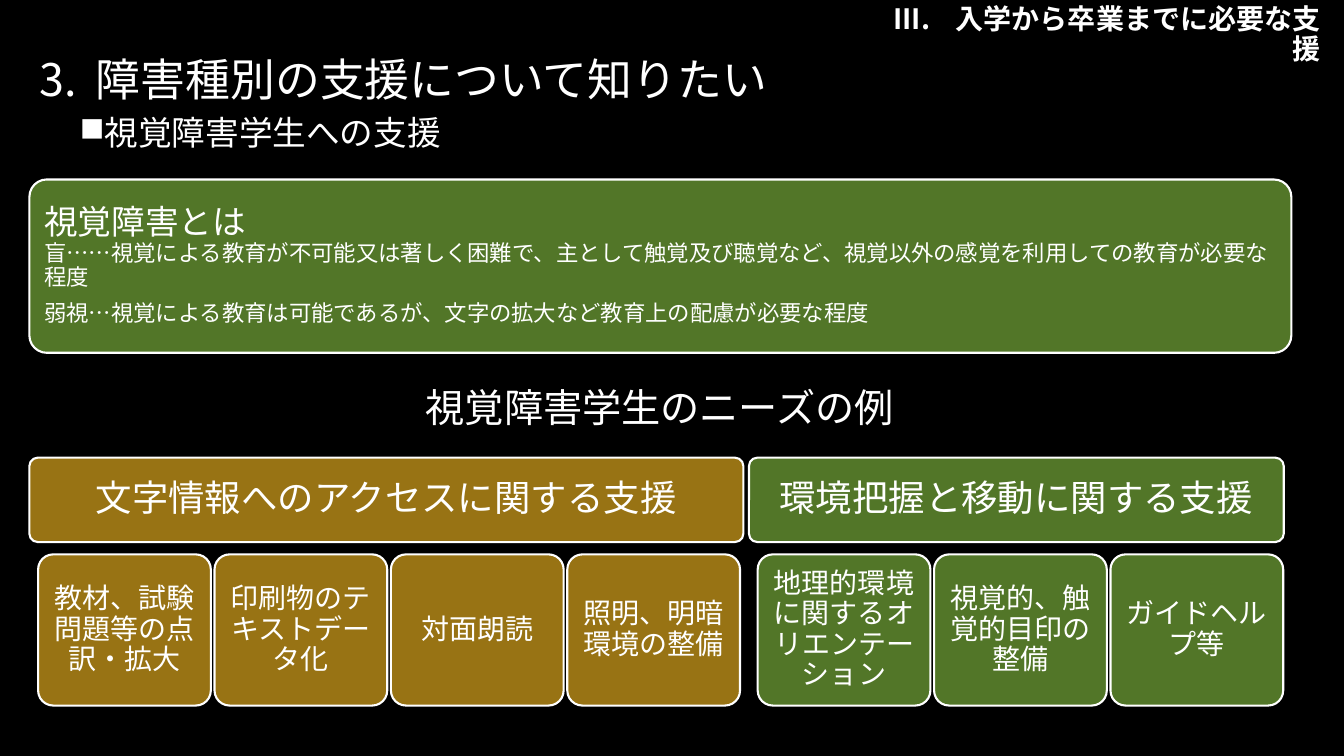
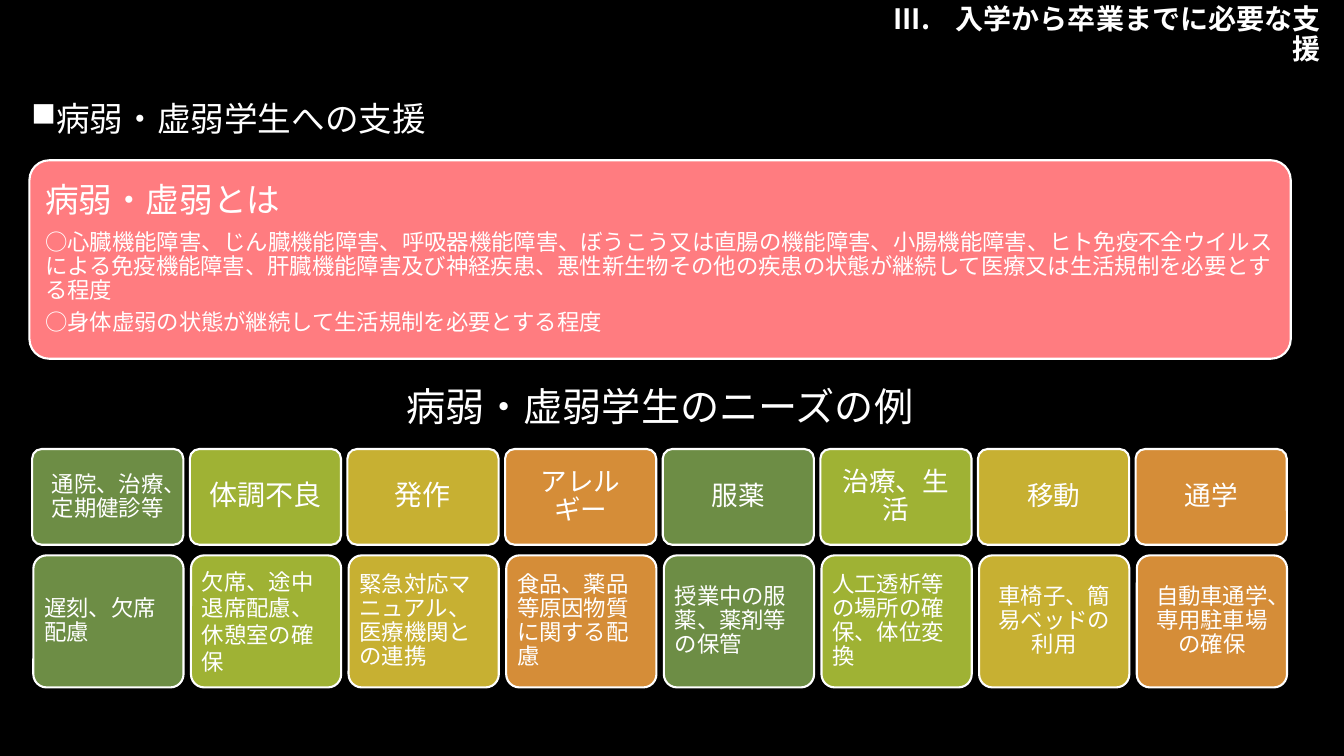
"""Build two slides on support for students with visual impairments and chronic illness."""
from dataclasses import dataclass
from itertools import cycle

from lxml import etree
from pptx import Presentation
from pptx.dml.color import RGBColor
from pptx.enum import lang, shapes, text
from pptx.oxml import ns
from pptx.util import Pt

FONT = "Noto Sans CJK JP"
BLACK = RGBColor(0x00, 0x00, 0x00)
WHITE = RGBColor(0xFF, 0xFF, 0xFF)
GREEN = RGBColor(0x52, 0x76, 0x28)
BROWN = RGBColor(0x98, 0x73, 0x14)
PINK = RGBColor(0xFF, 0x7C, 0x80)
SAGE = RGBColor(0x6D, 0x8D, 0x45)
LIME = RGBColor(0x9F, 0xB2, 0x34)
GOLD = RGBColor(0xC7, 0xB0, 0x32)
ORANGE = RGBColor(0xD5, 0x8D, 0x38)
LEFT, CENTER, RIGHT = text.PP_ALIGN.LEFT, text.PP_ALIGN.CENTER, text.PP_ALIGN.RIGHT


@dataclass(frozen=True)
class Area:
    left: float
    top: float
    width: float
    height: float

    def lengths(self) -> tuple:
        return Pt(self.left), Pt(self.top), Pt(self.width), Pt(self.height)


@dataclass(frozen=True)
class Bullet:
    tag: str
    attributes: dict
    margin: float
    hanging: float


@dataclass(frozen=True)
class Para:
    words: str
    size: float
    align: text.PP_ALIGN = LEFT
    before: float = 0
    after: float = 0
    spacing: float = 0.9
    bold: bool = False
    bullet: Bullet | None = None


@dataclass(frozen=True)
class Group:
    title: str
    color: RGBColor
    needs: tuple[str, ...]


@dataclass(frozen=True)
class Need:
    title: str
    size: float
    support: str
    align: text.PP_ALIGN = LEFT
    spacing: float = 0.9


ROMAN = Bullet("a:buAutoNum", {"type": "romanUcPeriod", "startAt": "3"}, 44.64, 44.64)
NUMBER = Bullet("a:buAutoNum", {"type": "arabicPeriod", "startAt": "3"}, 40.5, 40.5)
SQUARE = Bullet("a:buChar", {"char": "■"}, 46.8, 18)

VISION_GROUPS = (
    Group("文字情報へのアクセスに関する支援", BROWN,
          ("教材、試験問題等の点訳・拡大", "印刷物のテキストデータ化", "対面朗読", "照明、明暗環境の整備")),
    Group("環境把握と移動に関する支援", GREEN,
          ("地理的環境に関するオリエンテーション", "視覚的、触覚的目印の整備", "ガイドヘルプ等")),
)
ILLNESS_NEEDS = (
    Need("通院、治療、定期健診等", 16, "遅刻、欠席\n配慮"),
    Need("体調不良", 20, "欠席、途中退席配慮、休憩室の確保", spacing=1),
    Need("発作", 20, "緊急対応マニュアル、医療機関との連携"),
    Need("アレルギー", 19, "食品、薬品等原因物質に関する配慮"),
    Need("服薬", 19, "授業中の服薬、薬剤等の保管"),
    Need("治療、生活", 19, "人工透析等の場所の確保、体位変換"),
    Need("移動", 19, "車椅子、簡易ベッドの利用", CENTER),
    Need("通学", 19, "自動車通学、専用駐車場の確保", CENTER),
)


def fill_text(frame, paras: list[Para]) -> None:
    frame.word_wrap = True
    for index, para in enumerate(paras):
        paragraph = frame.paragraphs[0] if index == 0 else frame.add_paragraph()
        paragraph.text = para.words
        paragraph.alignment = para.align
        paragraph.line_spacing = para.spacing
        paragraph.space_before = Pt(para.before)
        paragraph.space_after = Pt(para.after)
        properties = paragraph._p.get_or_add_pPr()
        if para.bullet:
            properties.set("marL", str(int(Pt(para.bullet.margin))))
            properties.set("indent", str(-int(Pt(para.bullet.hanging))))
            etree.SubElement(properties, ns.qn(para.bullet.tag), para.bullet.attributes)
        font = paragraph.font
        font.name = FONT
        font.size = Pt(para.size)
        font.bold = para.bold
        font.color.rgb = WHITE
        font.language_id = lang.MSO_LANGUAGE_ID.JAPANESE
        defaults = properties.find(ns.qn("a:defRPr"))
        etree.SubElement(defaults, ns.qn("a:ea"), {"typeface": FONT})


def set_insets(frame, inset: float) -> None:
    frame.vertical_anchor = text.MSO_ANCHOR.MIDDLE
    frame.margin_left = frame.margin_right = Pt(inset)
    frame.margin_top = frame.margin_bottom = Pt(inset)


def add_text(page, area: Area, paras: list[Para]):
    box = page.shapes.add_textbox(*area.lengths())
    fill_text(box.text_frame, paras)
    return box


def add_card(page, area: Area, color: RGBColor, inset: float, paras: list[Para]) -> None:
    card = page.shapes.add_shape(shapes.MSO_SHAPE.ROUNDED_RECTANGLE, *area.lengths())
    card.adjustments[0] = 0.1
    card.shadow.inherit = False
    card.fill.solid()
    card.fill.fore_color.rgb = color
    card.line.color.rgb = WHITE
    card.line.width = Pt(1.5)
    set_insets(card.text_frame, inset)
    fill_text(card.text_frame, paras)


def add_needs_title(page, area: Area, words: str) -> None:
    box = add_text(page, area, [Para(words, 28, CENTER, after=9.8)])
    set_insets(box.text_frame, 8.4)


def add_page(deck):
    page = deck.slides.add_slide(deck.slide_layouts[6])
    page.background.fill.solid()
    page.background.fill.fore_color.rgb = BLACK
    add_text(page, Area(627, 0, 323.3, 37.4),
             [Para("入学から卒業までに必要な支援", 20, RIGHT, bold=True, bullet=ROMAN)])
    return page


def build_vision_page(deck) -> None:
    page = add_page(deck)
    add_text(page, Area(21, 37.4, 590, 85), [
        Para("障害種別の支援について知りたい", 32, bullet=NUMBER),
        Para("視覚障害学生への支援", 24, before=8, bullet=SQUARE),
    ])
    add_card(page, Area(21, 128.2, 901.4, 123.8), GREEN, 7.2, [
        Para("視覚障害とは", 24),
        Para("盲……視覚による教育が不可能又は著しく困難で、主として触覚及び聴覚など、"
             "視覚以外の感覚を利用しての教育が必要な程度", 16, after=8.4),
        Para("弱視…視覚による教育は可能であるが、文字の拡大など教育上の配慮が必要な程度", 16, after=5.6),
    ])
    add_needs_title(page, Area(23, 269.3, 896.4, 47.5), "視覚障害学生のニーズの例")
    left, pitch = 21, 126
    for group in VISION_GROUPS:
        width = 128 * len(group.needs) - 2
        add_card(page, Area(left, 326.9, width, 60.3), group.color, 7.9,
                 [Para(group.title, 26, CENTER, after=9.1)])
        for column, need in enumerate(group.needs):
            add_card(page, Area(left + 6.2 + column * pitch, 396, 123.4, 108), group.color, 5.8,
                     [Para(need, 20, CENTER, after=7)])
        left += width + 4


def build_illness_page(deck) -> None:
    page = add_page(deck)
    add_text(page, Area(-13.7, 69.8, 590, 57),
             [Para("病弱・虚弱学生への支援", 24, bullet=SQUARE)])
    add_card(page, Area(21, 114.5, 901, 141.8), PINK, 7.2, [
        Para("病弱・虚弱とは", 24, after=8.4),
        Para("○心臓機能障害、じん臓機能障害、呼吸器機能障害、ぼうこう又は直腸の機能障害、"
             "小腸機能障害、ヒト免疫不全ウイルスによる免疫機能障害、肝臓機能障害及び神経疾患、"
             "悪性新生物その他の疾患の状態が継続して医療又は生活規制を必要とする程度", 16, after=5.6),
        Para("○身体虚弱の状態が継続して生活規制を必要とする程度", 16, after=5.6),
    ])
    add_needs_title(page, Area(23, 271.4, 896.4, 41), "病弱・虚弱学生のニーズの例")
    colors = cycle((SAGE, LIME, GOLD, ORANGE))
    for column, (need, color) in enumerate(zip(ILLNESS_NEEDS, colors)):
        left = 23 + column * 112.6
        add_card(page, Area(left, 320.7, 108, 68.4), color, 5.4,
                 [Para(need.title, need.size, CENTER, after=need.size * 0.35)])
        after = 5.6 if need.spacing < 1 else 0
        add_card(page, Area(left + 0.8, 396.7, 107.3, 94.3), color, 5,
                 [Para(need.support, 16, need.align, after=after, spacing=need.spacing)])


def main() -> None:
    deck = Presentation()
    deck.slide_width, deck.slide_height = Pt(960), Pt(540)
    build_vision_page(deck)
    build_illness_page(deck)
    deck.save("out.pptx")


if __name__ == "__main__":
    main()
